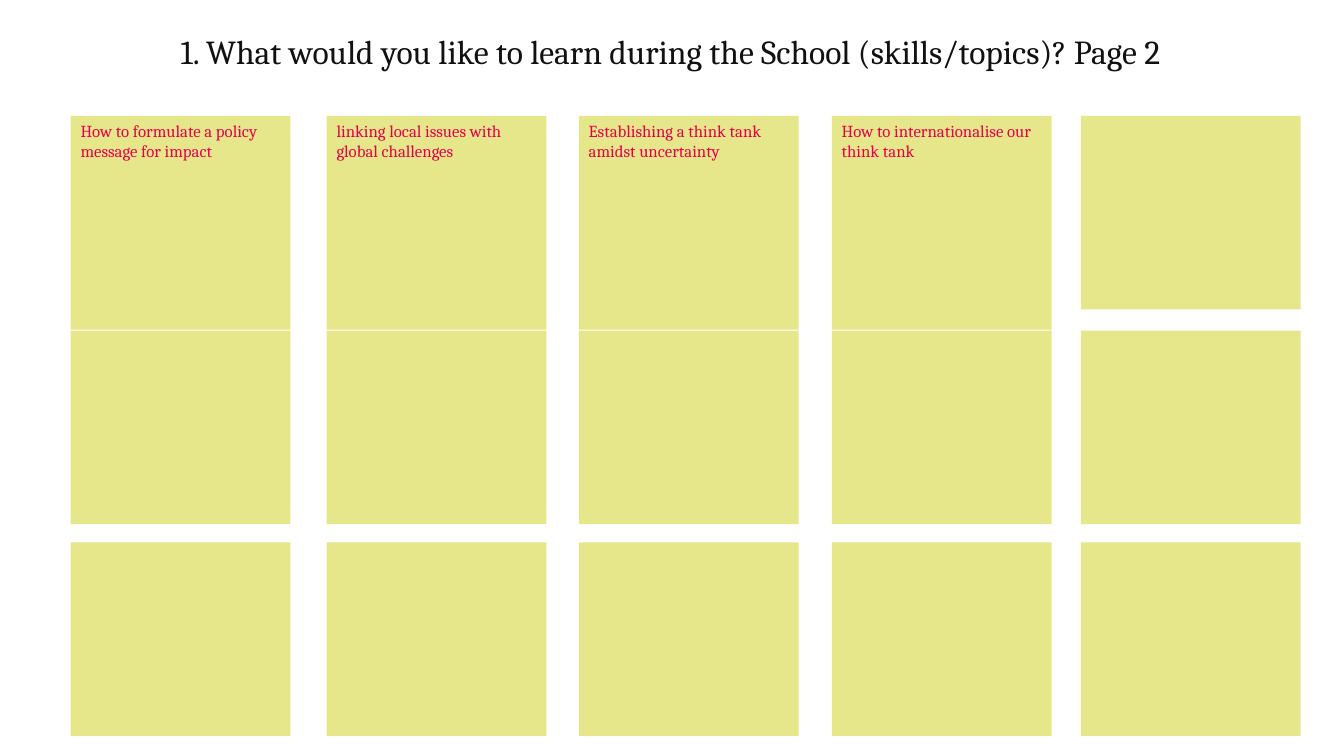
from dataclasses import dataclass
from itertools import product

from pptx import Presentation
from pptx.dml.color import RGBColor
from pptx.enum.shapes import MSO_SHAPE
from pptx.enum.text import MSO_ANCHOR, MSO_AUTO_SIZE, PP_ALIGN
from pptx.slide import Slide
from pptx.text.text import TextFrame
from pptx.util import Inches, Pt

COLOURS = {"background": "FFFFFF", "title": "111111", "note": "E6E68B", "answer": "E7004C"}
FONT = "Cambria"
TITLE = "1. What would you like to learn during the School (skills/topics)? Page 2"

# Grid of sticky notes, in inches
ROW_TOPS = (1.15, 3.28, 5.38)
NOTE_WIDTH = 2.18
NOTE_HEIGHT = 1.92
ANSWERED_HEIGHT = 2.12


@dataclass(frozen=True)
class Column:
    left: float
    answer: str = ""


COLUMNS = (
    Column(0.7, "How to formulate a policy message for impact"),
    Column(3.24, "linking local issues with global challenges"),
    Column(5.74, "Establishing a think tank amidst uncertainty"),
    Column(8.25, "How to internationalise our think tank"),
    Column(10.72),
)


def colour(name: str) -> RGBColor:
    return RGBColor.from_string(COLOURS[name])


def write_text(frame: TextFrame, text: str, size: int, colour_name: str, alignment: PP_ALIGN) -> None:
    frame.text = text
    frame.word_wrap = True
    frame.auto_size = MSO_AUTO_SIZE.NONE
    frame.vertical_anchor = MSO_ANCHOR.TOP
    paragraph = frame.paragraphs[0]
    paragraph.alignment = alignment
    paragraph.font.name = FONT
    paragraph.font.size = Pt(size)
    paragraph.font.color.rgb = colour(colour_name)


def add_title(slide: Slide) -> None:
    title = slide.shapes.title
    title.left, title.top = Inches(0.36), Inches(0.26)
    title.width, title.height = Inches(12.58), Inches(0.5)
    write_text(title.text_frame, TITLE, 24, "title", PP_ALIGN.CENTER)


def add_note(slide: Slide, left: float, top: float, answer: str) -> None:
    height = ANSWERED_HEIGHT if answer else NOTE_HEIGHT
    note = slide.shapes.add_shape(
        MSO_SHAPE.RECTANGLE, Inches(left), Inches(top), Inches(NOTE_WIDTH), Inches(height)
    )
    note.shadow.inherit = False
    note.fill.solid()
    note.fill.fore_color.rgb = colour("note")
    note.line.fill.background()
    if answer:
        write_text(note.text_frame, answer, 12, "answer", PP_ALIGN.LEFT)


def main() -> None:
    presentation = Presentation()
    presentation.slide_width, presentation.slide_height = Inches(13.33), Inches(7.5)
    slide = presentation.slides.add_slide(presentation.slide_layouts[5])
    slide.background.fill.solid()
    slide.background.fill.fore_color.rgb = colour("background")

    # Question at the top
    add_title(slide)

    # Notes: answers sit in the first row only
    for column, (row, top) in product(COLUMNS, enumerate(ROW_TOPS)):
        add_note(slide, column.left, top, column.answer if row == 0 else "")

    presentation.save("out.pptx")


if __name__ == "__main__":
    main()
